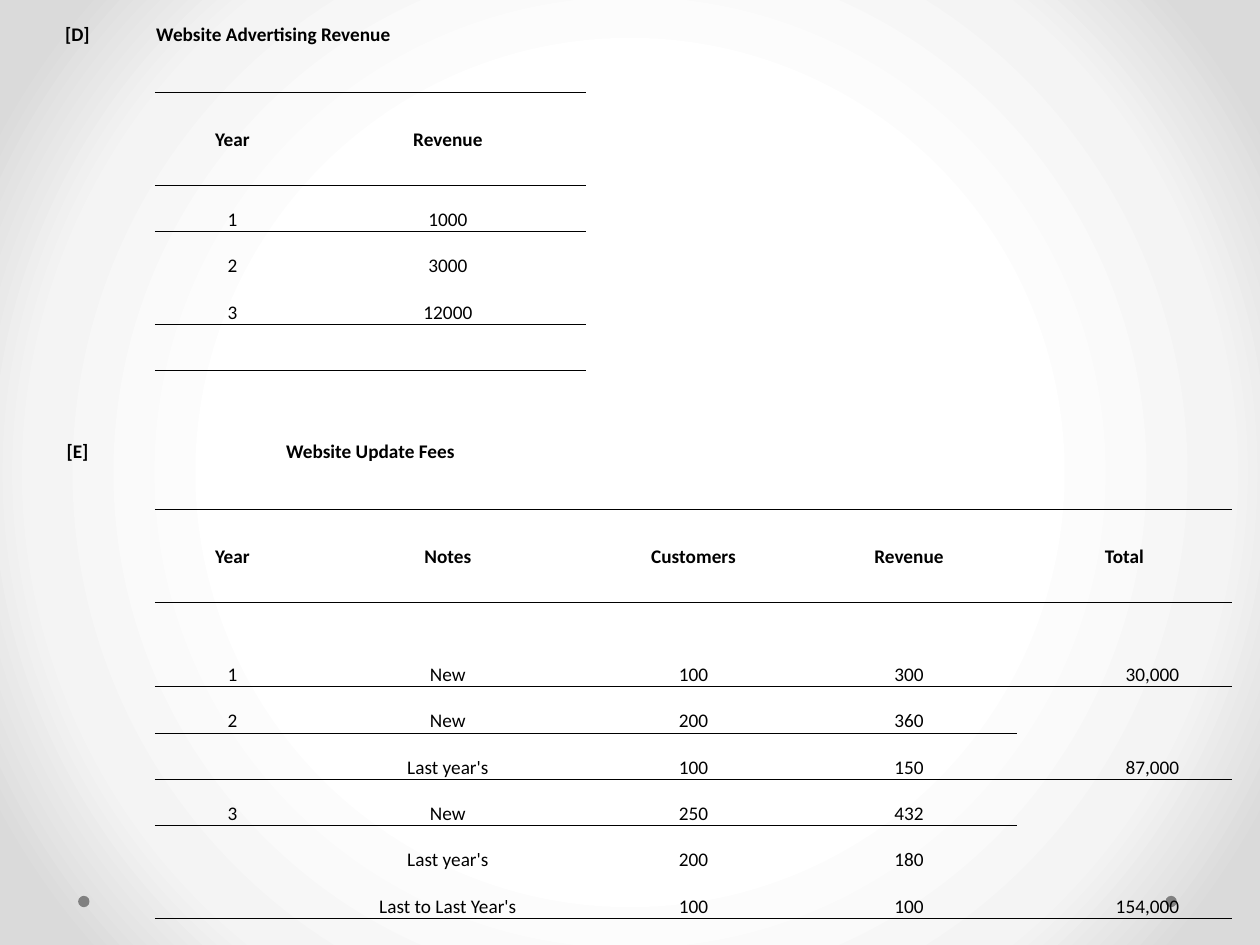
import pptx
import pptx.util
import pptx.oxml
import pptx.oxml.ns
import pptx.dml.color
import pptx.enum.shapes
import pptx.enum.text

Inches = pptx.util.Inches
ALIGN = pptx.enum.text.PP_ALIGN
ANCHOR = pptx.enum.text.MSO_ANCHOR

COLORS = {"ink": "000000", "dot": "808080", "center": "FFFFFF", "ring": "F4F4F4", "edge": "DADADA"}
BACKDROP = [(50, "center"), (76, "ring"), (92, "edge")]
FONT = "Calibri"
NO_GRID_STYLE = "{2D5ABB26-0587-4C30-8999-92F81FD0307C}"

LINES = [
    ["[D]", "Website Advertising Revenue"],
    [],
    ["", "Year", "Revenue"],
    [],
    ["", "1", "1000"],
    ["", "2", "3000"],
    ["", "3", "12000"],
    [],
    [],
    ["[E]", "Website Update Fees"],
    [],
    ["", "Year", "Notes", "Customers", "Revenue", "Total"],
    [],
    ["", "1", "New", "100", "300", "30,000"],
    ["", "2", "New", "200", "360", "87,000"],
    ["", "", "Last year's", "100", "150"],
    ["", "3", "New", "250", "432", "154,000"],
    ["", "", "Last year's", "200", "180"],
    ["", "", "Last to Last Year's", "100", "100"],
]
TITLE_SPANS = {0: 3, 9: 2}
HEADER_COLUMNS = {2: 2, 11: 5}
TOTAL_SPANS = {14: 2, 16: 3}
RULES = {2: 2, 4: 2, 7: 2, 11: 5, 13: 5, 14: 5, 16: 5, 19: 5}
FIRST_YEAR_ROW = 13
TOTAL_COLUMN = 5

COLUMN_WIDTHS = [1.23, 1.23, 2.19, 1.71, 1.71, 1.71]
TABLE_HEIGHT = 7.29
TALL_ROW = 0.67
ROW_HEIGHT = (TABLE_HEIGHT - TALL_ROW) / (len(LINES) - 1)
DOT_LEFTS = [9.25, 0.62]
DOT_TOP, DOT_SIZE = 7.11, 0.09


def rgb(name):
    return pptx.dml.color.RGBColor.from_string(COLORS[name])


def xml(markup):
    return pptx.oxml.parse_xml(markup)


def write(cell, text, bold=False, align=ALIGN.CENTER, anchor=ANCHOR.BOTTOM, right=0.01):
    cell.margin_left = cell.margin_top = Inches(0.01)
    cell.margin_right, cell.margin_bottom = Inches(right), 0
    cell.vertical_anchor = anchor
    if not text:
        return
    paragraph = cell.text_frame.paragraphs[0]
    paragraph.alignment = align
    run = paragraph.add_run()
    run.text = text
    run.font.name, run.font.size, run.font.bold = FONT, pptx.util.Pt(11), bold
    run.font.color.rgb = rgb("ink")


def paint_background(slide):
    stops = "".join(
        f'<a:gs pos="{position * 1000}"><a:srgbClr val="{COLORS[name]}"/></a:gs>'
        for position, name in BACKDROP
    )
    slide.background.fill.solid()
    properties = slide.background._cSld.bg.bgPr
    properties.replace(properties[0], xml(
        f'<a:gradFill {pptx.oxml.ns.nsdecls("a")} rotWithShape="1"><a:gsLst>{stops}</a:gsLst>'
        '<a:path path="circle"><a:fillToRect l="50000" t="50000" r="50000" b="50000"/></a:path>'
        '</a:gradFill>'
    ))


def add_dots(slide):
    for left in DOT_LEFTS:
        dot = slide.shapes.add_shape(
            pptx.enum.shapes.MSO_SHAPE.OVAL,
            Inches(left), Inches(DOT_TOP), Inches(DOT_SIZE), Inches(DOT_SIZE),
        )
        dot.shadow.inherit = False
        dot.fill.solid()
        dot.fill.fore_color.rgb = rgb("dot")
        dot.line.fill.background()


def draw_rules(cell, row, column):
    bottom = row + (cell.span_height if cell.is_merge_origin else 1)
    properties = cell._tc.get_or_add_tcPr()
    for side, boundary in (("lnT", row), ("lnB", bottom)):
        if 1 <= column <= RULES.get(boundary, 0):
            properties.append(xml(
                f'<a:{side} {pptx.oxml.ns.nsdecls("a")} w="6350"><a:solidFill>'
                f'<a:srgbClr val="{COLORS["ink"]}"/></a:solidFill></a:{side}>'
            ))
    cell.fill.background()


def format_for(row, column):
    if row in TITLE_SPANS:
        left = row == 0 and column == 1
        return {"bold": True, "align": ALIGN.LEFT if left else ALIGN.CENTER}
    if row in HEADER_COLUMNS:
        return {"bold": True, "anchor": ANCHOR.MIDDLE}
    if column == TOTAL_COLUMN and row >= FIRST_YEAR_ROW:
        return {"align": ALIGN.RIGHT, "right": 0.42}
    return {}


def merge_cells(table):
    for row, width in TITLE_SPANS.items():
        table.cell(row, 1).merge(table.cell(row, width))
    for row, last in HEADER_COLUMNS.items():
        for column in range(1, last + 1):
            table.cell(row, column).merge(table.cell(row + 1, column))
    for row, height in TOTAL_SPANS.items():
        table.cell(row, TOTAL_COLUMN).merge(table.cell(row + height - 1, TOTAL_COLUMN))


def add_revenue_table(slide):
    table = slide.shapes.add_table(
        len(LINES), len(COLUMN_WIDTHS), 0, 0, Inches(sum(COLUMN_WIDTHS)), Inches(TABLE_HEIGHT)
    ).table
    table.first_row = table.horz_banding = False
    table._tbl.tblPr.find(pptx.oxml.ns.qn("a:tableStyleId")).text = NO_GRID_STYLE
    for column, width in zip(table.columns, COLUMN_WIDTHS):
        column.width = Inches(width)
    for index, row in enumerate(table.rows):
        row.height = Inches(TALL_ROW if index == FIRST_YEAR_ROW else ROW_HEIGHT)
    merge_cells(table)
    for row, texts in enumerate(LINES):
        for column in range(len(COLUMN_WIDTHS)):
            cell = table.cell(row, column)
            text = texts[column] if column < len(texts) else ""
            write(cell, text, **format_for(row, column))
            draw_rules(cell, row, column)


def main():
    deck = pptx.Presentation()
    deck.slide_width, deck.slide_height = Inches(10), Inches(7.5)
    slide = deck.slides.add_slide(deck.slide_layouts[6])
    paint_background(slide)
    add_dots(slide)
    add_revenue_table(slide)
    deck.save("out.pptx")


if __name__ == "__main__":
    main()
